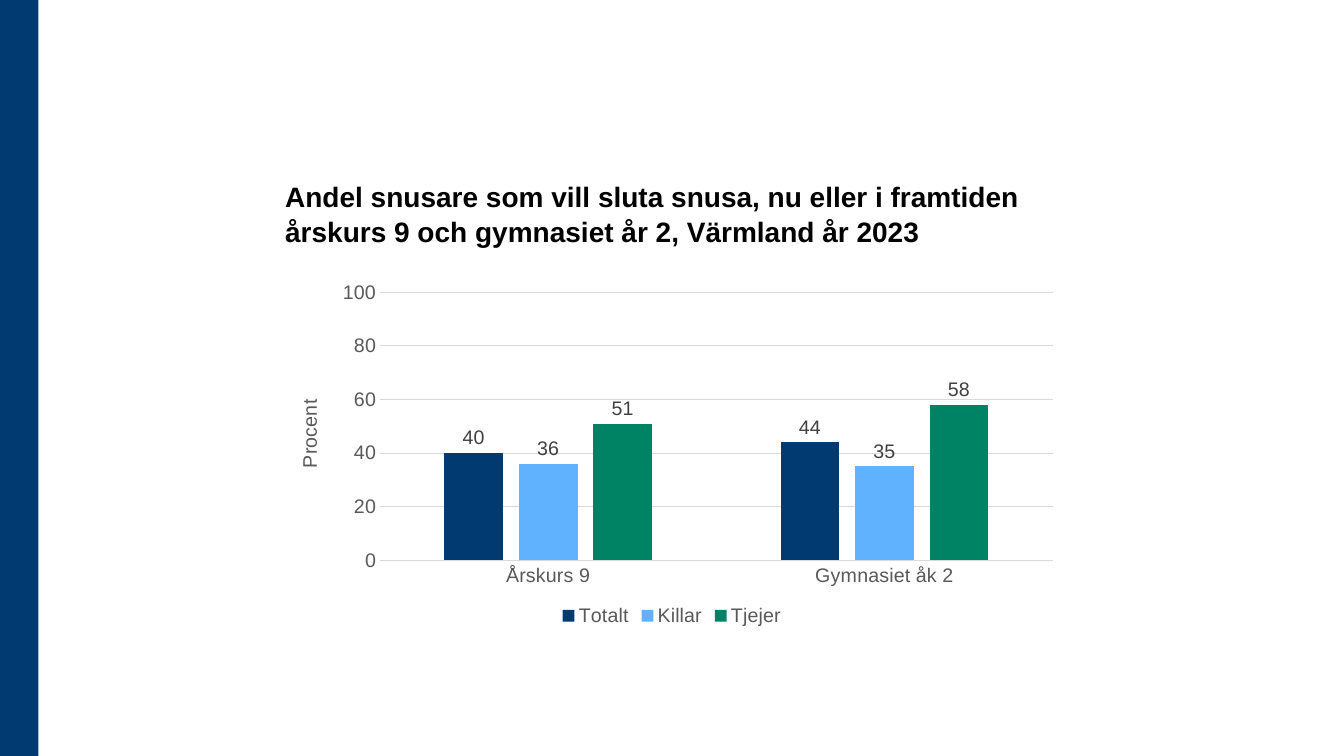
from pptx import Presentation
from pptx.chart.data import CategoryChartData
from pptx.dml.color import RGBColor
from pptx.enum.chart import (XL_CHART_TYPE, XL_LABEL_POSITION,
                             XL_LEGEND_POSITION, XL_TICK_MARK)
from pptx.enum.shapes import MSO_SHAPE
from pptx.enum.text import MSO_ANCHOR
from pptx.util import Pt

COLORS = {"navy": "003A70", "sky": "60B2FF", "green": "008264", "black": "000000",
          "text": "595959", "label": "404040", "grid": "D9D9D9"}
FONT = "Arial"


def rgb(name):
    return RGBColor.from_string(COLORS[name])


def set_font(font, size=14, color="text", bold=False):
    font.name, font.size, font.bold = FONT, Pt(size), bold
    font.color.rgb = rgb(color)


def add_text(tf, text, line_spacing=None, **fmt):
    p = tf.paragraphs[0]
    p.line_spacing = line_spacing
    r = p.add_run()
    r.text = text
    set_font(r.font, **fmt)


class Slide:
    def __init__(self, prs):
        self.s = prs.slides.add_slide(prs.slide_layouts[6])

    def bar(self, x, y, w, h, color):
        sp = self.s.shapes.add_shape(MSO_SHAPE.RECTANGLE, Pt(x), Pt(y), Pt(w), Pt(h))
        sp.shadow.inherit = False
        sp.fill.solid()
        sp.fill.fore_color.rgb = rgb(color)
        sp.line.fill.background()

    def title(self, x, y, w, h, text):
        tf = self.s.shapes.add_textbox(Pt(x), Pt(y), Pt(w), Pt(h)).text_frame
        tf.word_wrap = True
        tf.vertical_anchor = MSO_ANCHOR.BOTTOM
        add_text(tf, text, line_spacing=1.05, size=20, color="black", bold=True)

    def columns(self, x, y, w, h, categories, series, axis_title):
        data = CategoryChartData(number_format="0")
        data.categories = categories
        for name, values, _ in series:
            data.add_series(name, values)
        chart = self.s.shapes.add_chart(XL_CHART_TYPE.COLUMN_CLUSTERED,
                                        Pt(x), Pt(y), Pt(w), Pt(h), data).chart
        set_font(chart.font, color="black")
        chart.has_title = False

        # Legend
        chart.has_legend = True
        chart.legend.position = XL_LEGEND_POSITION.BOTTOM
        chart.legend.include_in_layout = False
        set_font(chart.legend.font)

        # Axes
        cat, val = chart.category_axis, chart.value_axis
        for axis in (cat, val):
            axis.major_tick_mark = axis.minor_tick_mark = XL_TICK_MARK.NONE
            set_font(axis.tick_labels.font)
        val.minimum_scale, val.maximum_scale, val.major_unit = 0, 100, 20
        val.tick_labels.number_format = "0"
        val.tick_labels.number_format_is_linked = False
        val.format.line.fill.background()
        for line in (cat.format.line, val.major_gridlines.format.line):
            line.color.rgb = rgb("grid")
            line.width = Pt(0.75)
        add_text(val.axis_title.text_frame, axis_title)

        # Columns and their labels
        plot = chart.plots[0]
        plot.gap_width, plot.overlap = 219, -27
        plot.vary_by_categories = False
        for column, (_, _, color) in zip(plot.series, series):
            column.format.fill.solid()
            column.format.fill.fore_color.rgb = rgb(color)
            labels = column.data_labels
            labels.show_value = True
            labels.position = XL_LABEL_POSITION.OUTSIDE_END
            labels.number_format = "0"
            labels.number_format_is_linked = False
            set_font(labels.font, color="label")


def main():
    prs = Presentation()
    prs.slide_width, prs.slide_height = Pt(960), Pt(540)
    slide = Slide(prs)

    # Side band
    slide.bar(0, 0, 27.4, 540, "navy")

    # Title and chart share one column
    left, width = 196.6, 566.6
    slide.title(left, 76.3, width, 104.4,
                "Andel snusare som vill sluta snusa, nu eller i framtiden "
                "årskurs 9 och gymnasiet år 2, Värmland år 2023")
    slide.columns(left, 195.8, width, 254.9,
                  ["Årskurs 9", "Gymnasiet åk 2"],
                  [("Totalt", (40, 44), "navy"),
                   ("Killar", (36, 35), "sky"),
                   ("Tjejer", (51, 58), "green")],
                  "Procent")
    prs.save("out.pptx")


if __name__ == "__main__":
    main()
